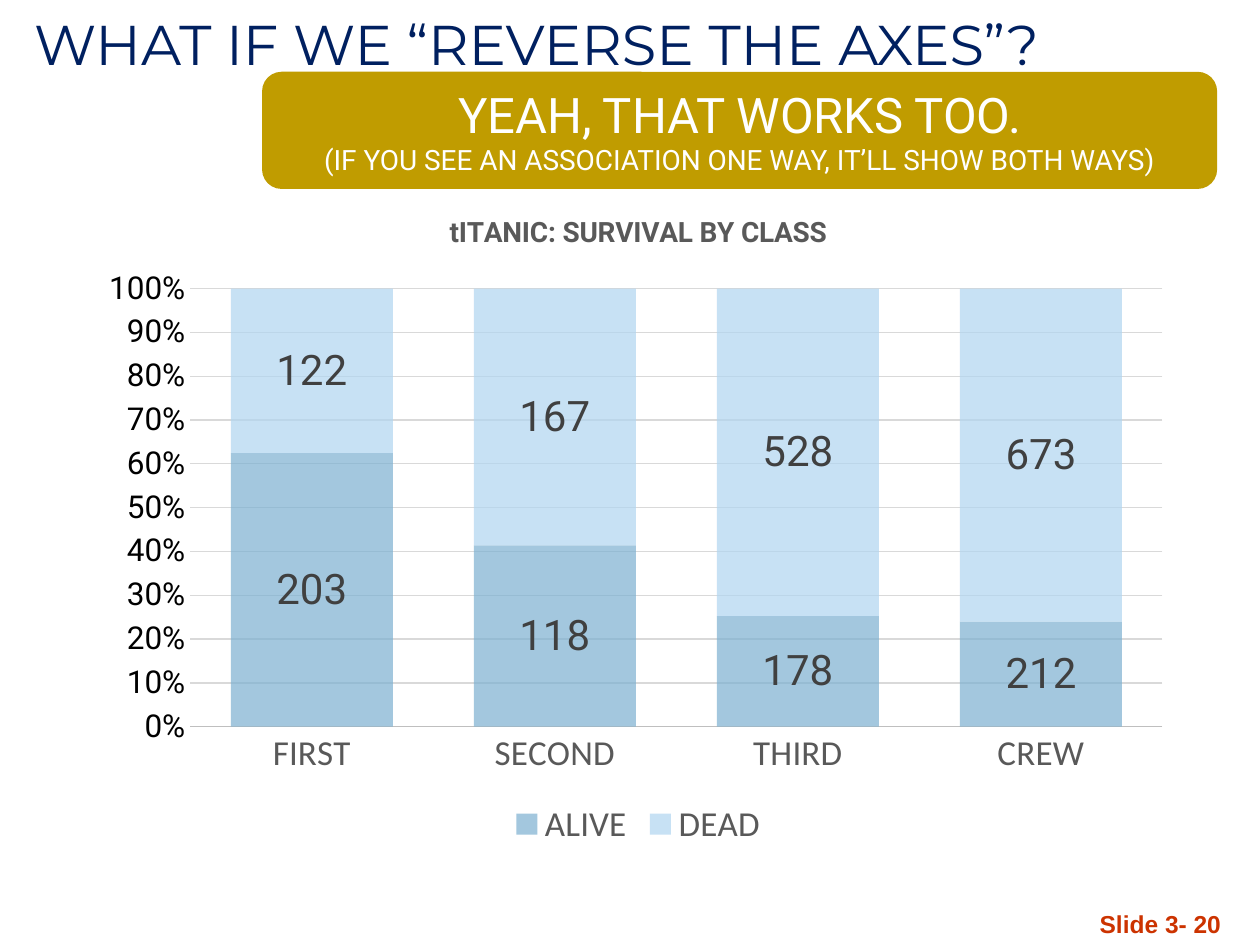
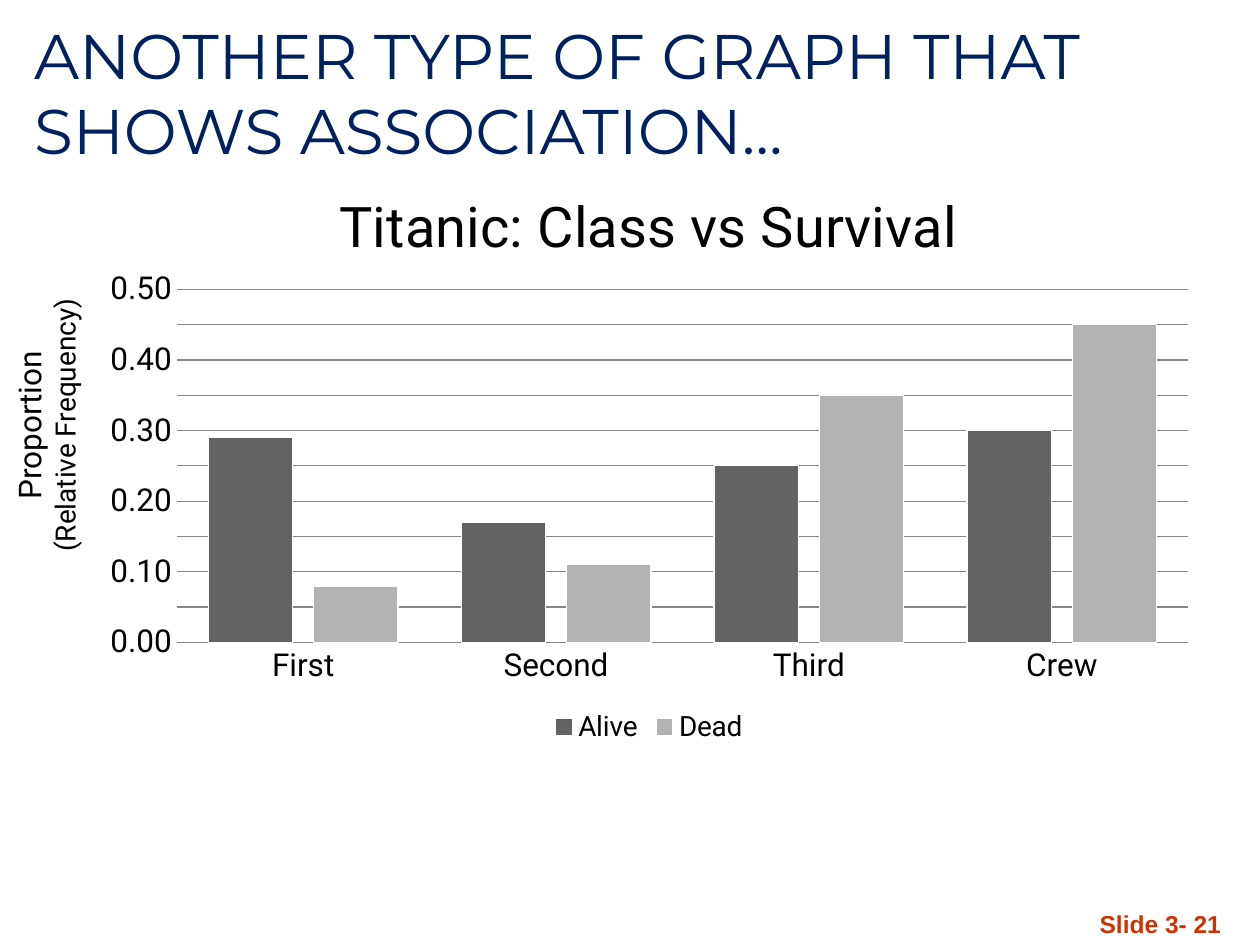
import copy

import pptx
import pptx.chart.data
import pptx.dml.color
import pptx.enum.chart
import pptx.enum.shapes
import pptx.enum.text
import pptx.oxml
import pptx.oxml.ns
import pptx.util

PX = 9144
NAVY, GOLD, RUST = "002060", "C09C00", "CC3300"
BLACK, WHITE, GREY = "000000", "FFFFFF", "595959"
ANCHOR = pptx.enum.text.MSO_ANCHOR
ALIGN = pptx.enum.text.PP_ALIGN
CHART = pptx.enum.chart


def box(*lengths):
    """Turn px lengths into EMU."""
    return [n * PX for n in lengths]


def rgb(color):
    """Turn a hex string into a colour."""
    return pptx.dml.color.RGBColor.from_string(color)


def style(font, name, size, color, bold=False):
    """Set the face, size, colour and weight of a font."""
    font.name, font.size, font.bold = name, pptx.util.Pt(size), bold
    font.color.rgb = rgb(color)


def line(fmt, color, width=0.75):
    """Give a line its colour and width."""
    fmt.line.color.rgb = rgb(color)
    fmt.line.width = pptx.util.Pt(width)


def write(sp, lines, color, align, anchor, wrap=True, font="Roboto", bold=False):
    """Fill a shape with (text, size) lines."""
    tf = sp.text_frame
    tf.word_wrap, tf.vertical_anchor = wrap, anchor
    tf.text = "\n".join(text for text, size in lines)
    for p, (text, size) in zip(tf.paragraphs, lines):
        p.alignment = align
        style(p.runs[0].font, font, size, color, bold)


def add_slide(prs, title, bounds, size, anchor, number):
    """Add a slide with its title and its number at the foot."""
    s = prs.slides.add_slide(prs.slide_layouts[5])
    sp = s.shapes.title
    sp.left, sp.top, sp.width, sp.height = box(*bounds)
    tf = sp.text_frame
    tf.text = title
    tf.auto_size = pptx.enum.text.MSO_AUTO_SIZE.NONE
    tf.vertical_anchor = anchor
    p = tf.paragraphs[0]
    p.alignment = ALIGN.LEFT
    for r in p.runs:
        style(r.font, "Montserrat", size, NAVY)
    foot = s.shapes.add_textbox(*box(771, 700, 208, 50))
    write(foot, [(f"Slide 3- {number}", 14)], RUST, ALIGN.RIGHT, ANCHOR.BOTTOM,
          font="Arial", bold=True)
    return s


def add_banner(s, bounds, lines):
    """Add a rounded gold banner."""
    sp = s.shapes.add_shape(pptx.enum.shapes.MSO_SHAPE.ROUNDED_RECTANGLE, *box(*bounds))
    sp.shadow.inherit = False
    sp.fill.solid()
    sp.fill.fore_color.rgb = rgb(GOLD)
    sp.line.fill.background()
    write(sp, lines, WHITE, ALIGN.CENTER, ANCHOR.MIDDLE)


def add_side_label(s, bounds, lines):
    """Add a text that reads upwards."""
    sp = s.shapes.add_textbox(*box(*bounds))
    sp.rotation = 270
    write(sp, lines, BLACK, ALIGN.CENTER, ANCHOR.TOP, wrap=False)


def place_plot(chart, **fractions):
    """Fix the inner plot area as fractions of the chart."""
    area = chart._chartSpace.chart.plotArea
    for old in area.findall(pptx.oxml.ns.qn("c:layout")):
        area.remove(old)
    parts = "".join(f'<c:{k} val="{v}"/>' for k, v in fractions.items())
    area.insert(0, pptx.oxml.parse_xml(
        f'<c:layout {pptx.oxml.ns.nsdecls("c")}><c:manualLayout>'
        '<c:layoutTarget val="inner"/><c:xMode val="edge"/><c:yMode val="edge"/>'
        f'{parts}</c:manualLayout></c:layout>'))


def paint(series, color, opacity):
    """Fill a series, partly see-through below 100 percent."""
    fill = series.format.fill
    fill.solid()
    fill.fore_color.rgb = rgb(color)
    if opacity < 100:
        clr = next(series._element.iter(pptx.oxml.ns.qn("a:srgbClr")))
        clr.append(pptx.oxml.parse_xml(
            f'<a:alpha {pptx.oxml.ns.nsdecls("a")} val="{opacity * 1000}"/>'))


def add_minor_grid(axis, unit):
    """Add minor gridlines that look like the major ones."""
    axis.minor_unit = unit
    axis.has_minor_gridlines = True
    major, minor = (axis._element.find(pptx.oxml.ns.qn(f"c:{k}Gridlines"))
                    for k in ("major", "minor"))
    minor.append(copy.deepcopy(major[0]))


def add_columns(s, kind, bounds, title, categories, series, gap, overlap, opacity=100):
    """Add a column chart from (name, values, colour) series."""
    data = pptx.chart.data.CategoryChartData()
    data.categories = categories
    for name, values, color in series:
        data.add_series(name, values)
    chart = s.shapes.add_chart(kind, *box(*bounds), data).chart
    style(chart.font, "Arial", 10, BLACK)
    text, size, color, bold = title
    chart.has_title = True
    chart.chart_title.text_frame.text = text
    chart.chart_title.include_in_layout = False
    style(chart.chart_title.text_frame.paragraphs[0].runs[0].font, "Roboto", size, color, bold)
    plot = chart.plots[0]
    plot.gap_width, plot.overlap, plot.vary_by_categories = gap, overlap, False
    for ser, (name, values, color) in zip(plot.series, series):
        paint(ser, color, opacity)
    return chart


def format_axes(chart, top, number_format, grid, base, label, legend):
    """Format both axes and the legend; label and legend are font settings."""
    cat, val = chart.category_axis, chart.value_axis
    for axis in (cat, val):
        axis.major_tick_mark = axis.minor_tick_mark = CHART.XL_TICK_MARK.NONE
    style(cat.tick_labels.font, *label)
    line(cat.format, base)
    style(val.tick_labels.font, "Roboto", 18, BLACK)
    val.tick_labels.number_format = number_format
    val.tick_labels.number_format_is_linked = False
    val.minimum_scale, val.maximum_scale, val.major_unit = 0, top, 0.1
    val.format.line.fill.background()
    val.has_major_gridlines = True
    line(val.major_gridlines.format, grid)
    chart.has_legend = True
    chart.legend.position = CHART.XL_LEGEND_POSITION.BOTTOM
    chart.legend.include_in_layout = False
    style(chart.legend.font, *legend)


def add_survival_shares(s):
    """Add the stacked chart of survival within each class."""
    chart = add_columns(
        s, CHART.XL_CHART_TYPE.COLUMN_STACKED_100, (73, 150, 867, 527),
        ("tITANIC: SURVIVAL BY CLASS", 16, GREY, True),
        ["FIRST", "SECOND", "THIRD", "CREW"],
        [("ALIVE", (203, 118, 178, 212), "7CB0D1"),
         ("DEAD", (122, 167, 528, 673), "B0D5F0")],
        gap=50, overlap=100, opacity=70)
    font = ("Calibri", 20, GREY)
    format_axes(chart, 1, "0%", "D9D9D9", "BFBFBF", font, font)
    place_plot(chart, x=0.09, y=0.15, w=0.89, h=0.66)
    for ser in chart.plots[0].series:
        labels = ser.data_labels
        labels.show_value = True
        labels.position = CHART.XL_LABEL_POSITION.CENTER
        style(labels.font, "Roboto", 24, "404040")


def add_class_proportions(s):
    """Add the clustered chart of class within each outcome."""
    chart = add_columns(
        s, CHART.XL_CHART_TYPE.COLUMN_CLUSTERED, (69, 127, 892, 467),
        ("Titanic: Class vs Survival", 32, BLACK, False),
        ["First", "Second", "Third", "Crew"],
        [("Alive", (0.29, 0.17, 0.25, 0.30), "636363"),
         ("Dead", (0.08, 0.11, 0.35, 0.45), "B3B3B3")],
        gap=75, overlap=-25)
    format_axes(chart, 0.5, "#,##0.00", "868686", "868686",
                ("Roboto", 18, BLACK), ("Roboto", 16, BLACK))
    place_plot(chart, x=0.08, y=0.22, w=0.9, h=0.6)
    add_minor_grid(chart.value_axis, 0.05)
    for ser in chart.plots[0].series:
        line(ser.format, WHITE)


def main():
    """Build both slides and save them."""
    prs = pptx.Presentation()
    prs.slide_width, prs.slide_height = box(1000, 750)

    s = add_slide(prs, "WHAT IF WE “REVERSE THE AXES”?", (17, 8, 908, 58), 32,
                  ANCHOR.BOTTOM, 20)
    add_survival_shares(s)
    add_banner(s, (208, 57, 758, 93), [
        ("YEAH, THAT WORKS TOO.", 28),
        ("(IF YOU SEE AN ASSOCIATION ONE WAY, IT’LL SHOW BOTH WAYS)", 16)])

    s = add_slide(prs, "ANOTHER TYPE OF GRAPH THAT \vSHOWS ASSOCIATION…",
                  (17, 8, 958, 117), 36, ANCHOR.TOP, 21)
    add_class_proportions(s)
    add_side_label(s, (-80, 304, 233, 67), [("Proportion", 18), ("(Relative Frequency)", 16)])

    prs.save("out.pptx")


if __name__ == "__main__":
    main()
